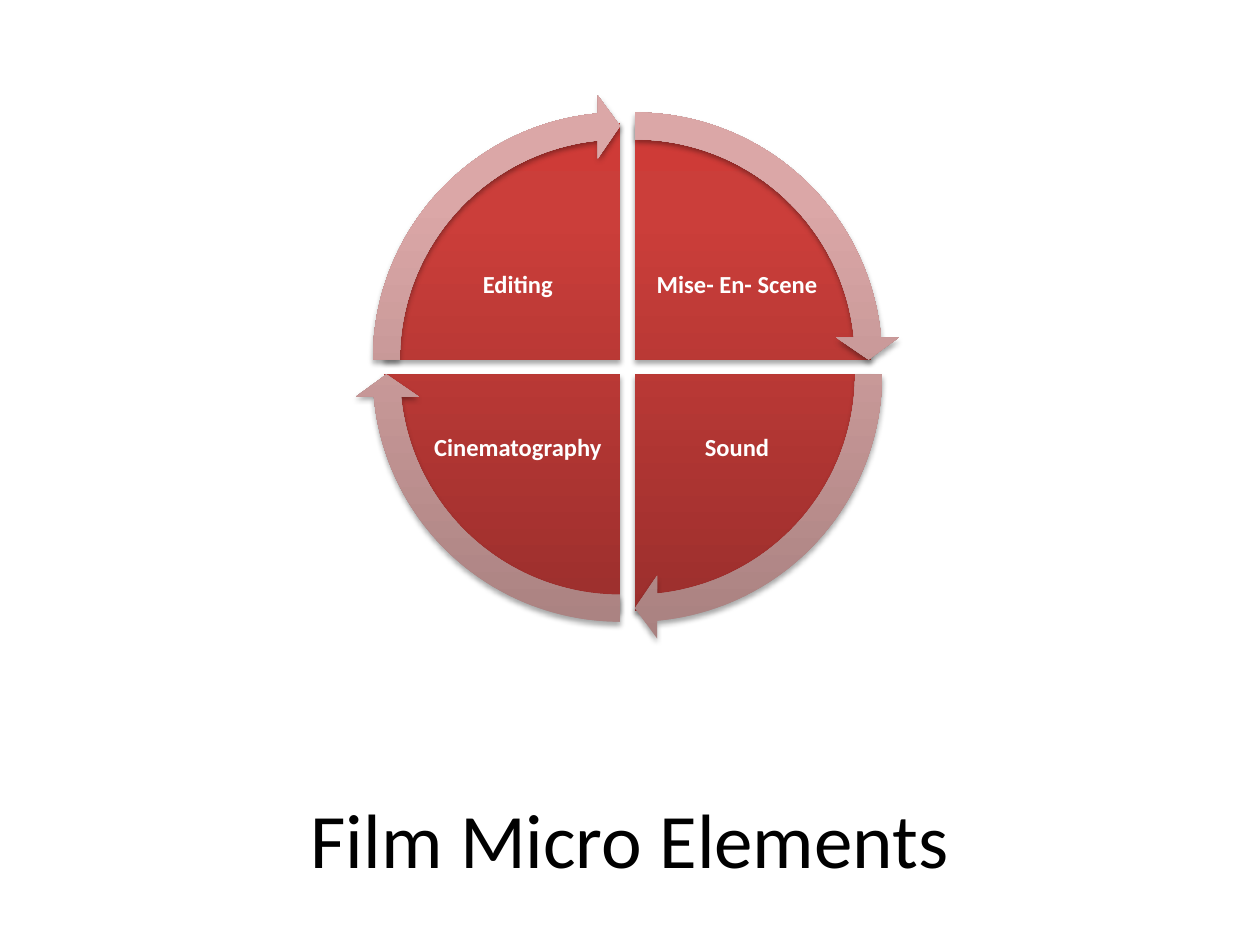
from dataclasses import dataclass

from pptx import Presentation
from pptx.dml.color import RGBColor
from pptx.enum import shapes, text
from pptx.oxml import parse_xml
from pptx.oxml.ns import nsdecls
from pptx.util import Cm, Pt


@dataclass(frozen=True)
class Theme:
    font: str = "Calibri"
    title_size: int = 44
    label_size: int = 14
    title_color: str = "000000"
    label_color: str = "FFFFFF"
    shadow_color: str = "000000"
    pie_stops: tuple = ((0, "9C2F2D"), (80, "CB3E3A"), (100, "CE3B37"))
    arrow_stops: tuple = ((0, "A98180"), (80, "DBA7A7"), (100, "DDA7A6"))


theme = Theme()


def add_round_shape(kind, x, y, size, adjustments, stops):
    shape = cycle.shapes.add_shape(
        kind, Cm(x - size / 2), Cm(y - size / 2), Cm(size), Cm(size)
    )
    for index, value in enumerate(adjustments):
        shape.adjustments[index] = value
    stop_xml = "".join(
        f'<a:gs pos="{position * 1000}"><a:srgbClr val="{color}"/></a:gs>'
        for position, color in stops
    )
    properties = shape._element.spPr
    properties.append(parse_xml(
        f'<a:gradFill {nsdecls("a")} rotWithShape="1"><a:gsLst>{stop_xml}</a:gsLst>'
        '<a:lin ang="16200000" scaled="0"/></a:gradFill>'
    ))
    shape.line.fill.background()
    properties.append(parse_xml(
        f'<a:effectLst {nsdecls("a")}>'
        f'<a:outerShdw blurRad="{Pt(3.1)}" dist="{Pt(1.8)}" dir="5400000" rotWithShape="0">'
        f'<a:srgbClr val="{theme.shadow_color}"><a:alpha val="35000"/></a:srgbClr>'
        '</a:outerShdw></a:effectLst>'
    ))


def write_text(shape, content, size, color, bold):
    frame = shape.text_frame
    frame.text = content
    frame.word_wrap = True
    frame.vertical_anchor = text.MSO_ANCHOR.MIDDLE
    paragraph = frame.paragraphs[0]
    paragraph.alignment = text.PP_ALIGN.CENTER
    paragraph.font.name = theme.font
    paragraph.font.size = Pt(size)
    paragraph.font.bold = bold
    paragraph.font.color.rgb = RGBColor.from_string(color)
    return frame


presentation = Presentation()
presentation.slide_width, presentation.slide_height = Cm(25.4), Cm(19.05)
slide = presentation.slides.add_slide(presentation.slide_layouts[5])

title = slide.shapes.title
title.left, title.top, title.width, title.height = Cm(1.75), Cm(15.37), Cm(21.9), Cm(3.05)
write_text(title, "Film Micro Elements", theme.title_size, theme.title_color, False)

center_x, center_y = 12.65, 7.4
half_gap = 0.15
pie_size, arrow_size = 9.53, 10.69
label_width, label_height = 3.51, 2.62
label_offset_x, label_offset_y = 2.21, 1.64
quarter_turn = 54
quadrants = [
    ("Mise- En- Scene", 1, -1, 162),
    ("Sound", 1, 1, 0),
    ("Cinematography", -1, 1, 54),
    ("Editing", -1, -1, 108),
]

cycle = slide.shapes.add_group_shape()
for label, side_x, side_y, start in quadrants:
    add_round_shape(
        shapes.MSO_SHAPE.PIE,
        center_x + side_x * half_gap, center_y + side_y * half_gap, pie_size,
        (start, (start + quarter_turn) % 216), theme.pie_stops,
    )
    box = cycle.shapes.add_textbox(
        Cm(center_x + side_x * label_offset_x - label_width / 2),
        Cm(center_y + side_y * label_offset_y - label_height / 2),
        Cm(label_width), Cm(label_height),
    )
    frame = write_text(box, label, theme.label_size, theme.label_color, True)
    frame.margin_left = frame.margin_right = Cm(0.05)
    frame.margin_top = frame.margin_bottom = Cm(0.05)
    frame.paragraphs[0].line_spacing = 0.9

arrow_thickness, arrow_head_angle, arrow_head_width = 0.05085, 3.275, 0.05932
for label, side_x, side_y, start in quadrants:
    add_round_shape(
        shapes.MSO_SHAPE.CIRCULAR_ARROW,
        center_x + side_x * half_gap, center_y + side_y * half_gap, arrow_size,
        (arrow_thickness, arrow_head_angle, start + quarter_turn - arrow_head_angle,
         start, arrow_head_width),
        theme.arrow_stops,
    )

presentation.save("out.pptx")
